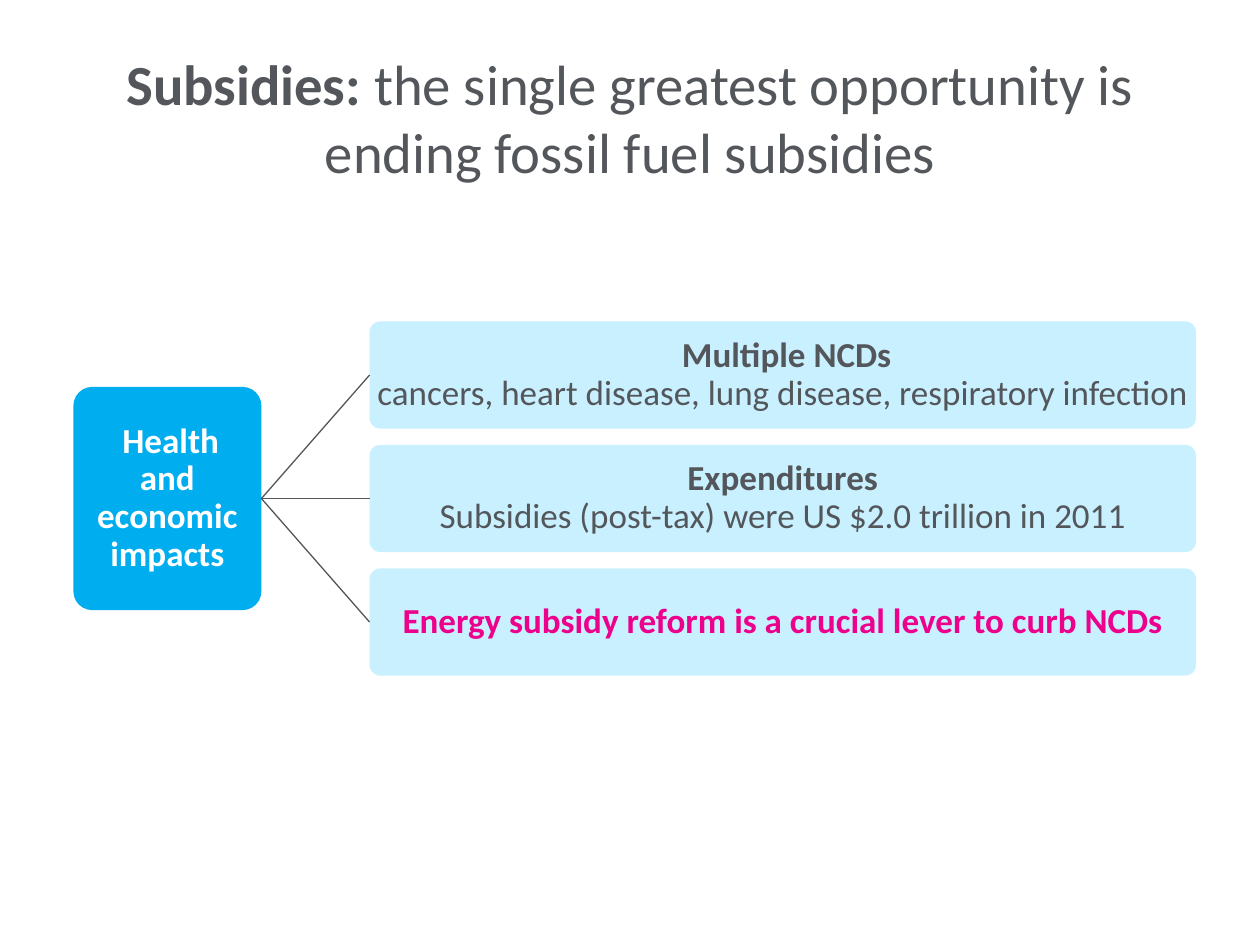
from pptx import Presentation
from pptx.dml.color import RGBColor
from pptx.enum.shapes import MSO_CONNECTOR as CONNECTOR, MSO_SHAPE as SHAPE
from pptx.enum.text import MSO_ANCHOR as ANCHOR, PP_ALIGN as ALIGN
from pptx.oxml.ns import qn
from pptx.util import Cm, Pt
from lxml.etree import SubElement

COLORS = {
    "grey": "53565A",
    "blue": "00AEEF",
    "pale": "C9F0FF",
    "white": "FFFFFF",
    "pink": "EC008C",
}
IMPACTS = [
    ([[(" Multiple NCDs", True)],
      [("cancers, heart disease, lung disease, respiratory infection", False)]], "grey"),
    ([[("Expenditures", True)],
      [("Subsidies (post-tax) were US $2.0 trillion in 2011", False)]], "grey"),
    ([[("Energy subsidy reform is a crucial lever to curb NCDs", True)]], "pink"),
]


def rgb(name):
    return RGBColor.from_string(COLORS[name])


def write(frame, lines, size=20, color="grey", spacing=None, margin=None):
    frame.word_wrap = True
    frame.vertical_anchor = ANCHOR.MIDDLE
    if margin is not None:
        frame.margin_left = frame.margin_right = Cm(margin)
        frame.margin_top = frame.margin_bottom = Cm(margin)
    for index, line in enumerate(lines):
        paragraph = frame.add_paragraph() if index else frame.paragraphs[0]
        paragraph.alignment = ALIGN.CENTER
        paragraph.line_spacing = spacing
        for text, bold, *own_size in line:
            run = paragraph.add_run()
            run.text = text
            run.font.name = "Calibri"
            run.font.size = Pt(own_size[0] if own_size else size)
            run.font.bold = bold
            run.font.color.rgb = rgb(color)


def add_title(slide, left, top, width, height):
    title = slide.shapes.title
    title.left, title.top = Cm(left), Cm(top)
    title.width, title.height = Cm(width), Cm(height)
    write(title.text_frame, [[
        ("Subsidies: ", True),
        ("the single greatest opportunity is ending fossil fuel subsidies", False),
    ]], size=32.4)


def add_card(slide, left, top, width, height, fill, lines, color, margin):
    card = slide.shapes.add_shape(SHAPE.ROUNDED_RECTANGLE,
                                  Cm(left), Cm(top), Cm(width), Cm(height))
    card.adjustments[0] = 0.1
    card.shadow.inherit = False
    card.fill.solid()
    card.fill.fore_color.rgb = rgb(fill)
    card.line.fill.background()
    write(card.text_frame, lines, color=color, spacing=0.9, margin=margin)
    return card


def add_branch(slide, start, end):
    branch = slide.shapes.add_connector(CONNECTOR.STRAIGHT, 0, 0, 0, 0)
    branch.begin_connect(start, 3)
    branch.end_connect(end, 1)
    branch.line.color.rgb = rgb("grey")
    branch.line.width = Pt(0.75)
    SubElement(branch._element.spPr, qn("a:effectLst"))


def add_impact_tree(slide, left, top, width, height):
    root_width, root_height, gap = 3.79, 4.5, 2.18
    card_height = 2.16
    pitch = (height - card_height) / (len(IMPACTS) - 1)
    card_left = root_width + gap
    root = add_card(slide, left, top + (height - root_height) / 2, root_width, root_height,
                    "blue", [[(" ", True, 17), ("Health and economic impacts", True)]],
                    "white", 0.13)
    for row, (lines, color) in enumerate(IMPACTS):
        card = add_card(slide, left + card_left, top + row * pitch, width - card_left,
                        card_height, "pale", lines, color, 0.09)
        add_branch(slide, root, card)


def main():
    deck = Presentation()
    deck.slide_width, deck.slide_height = Cm(25.4), Cm(19.05)
    slide = deck.slides.add_slide(deck.slide_layouts[5])
    add_title(slide, 1.27, 0.76, 22.86, 3.18)
    add_impact_tree(slide, 1.48, 6.48, 22.63, 7.14)
    deck.save("out.pptx")


if __name__ == "__main__":
    main()
